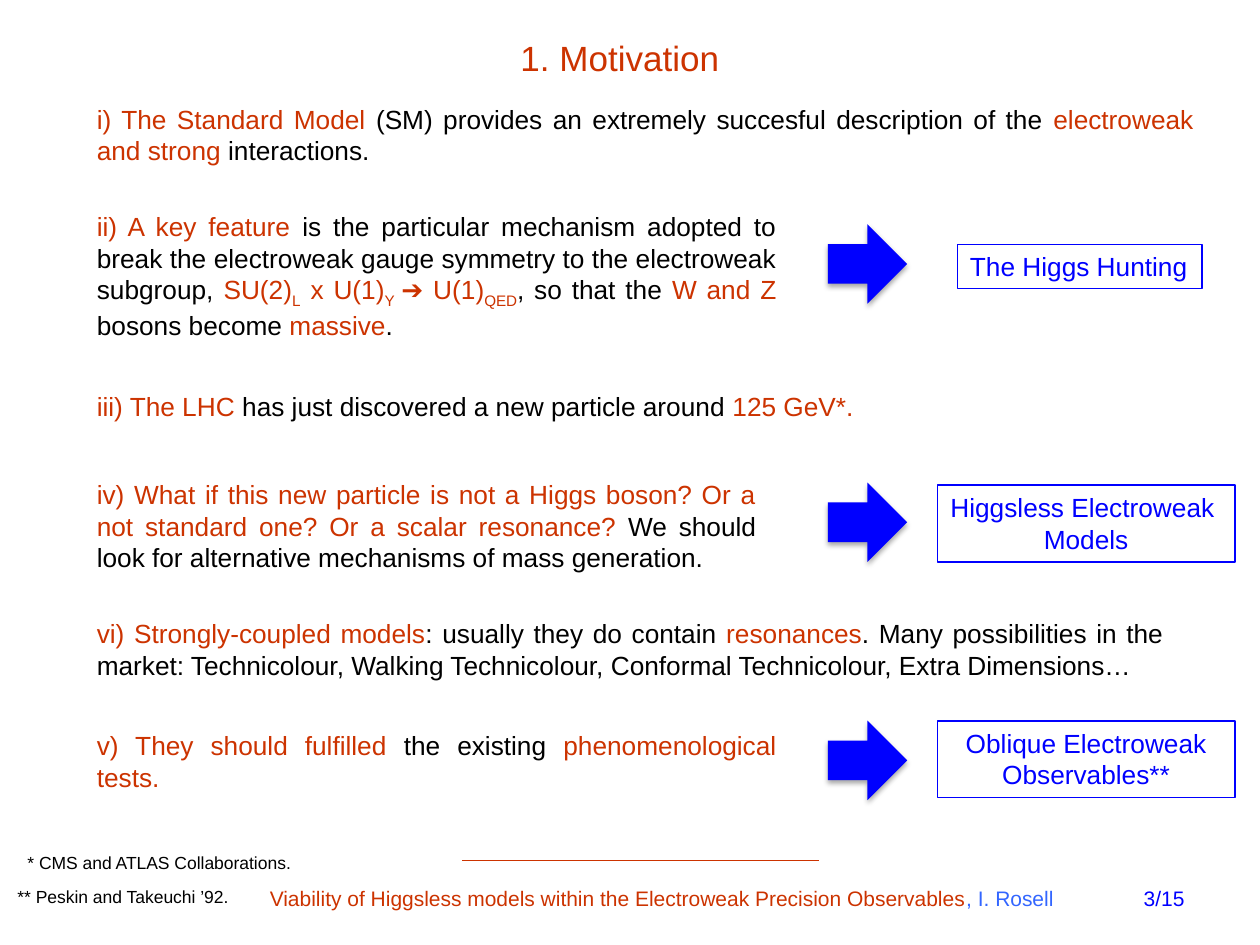
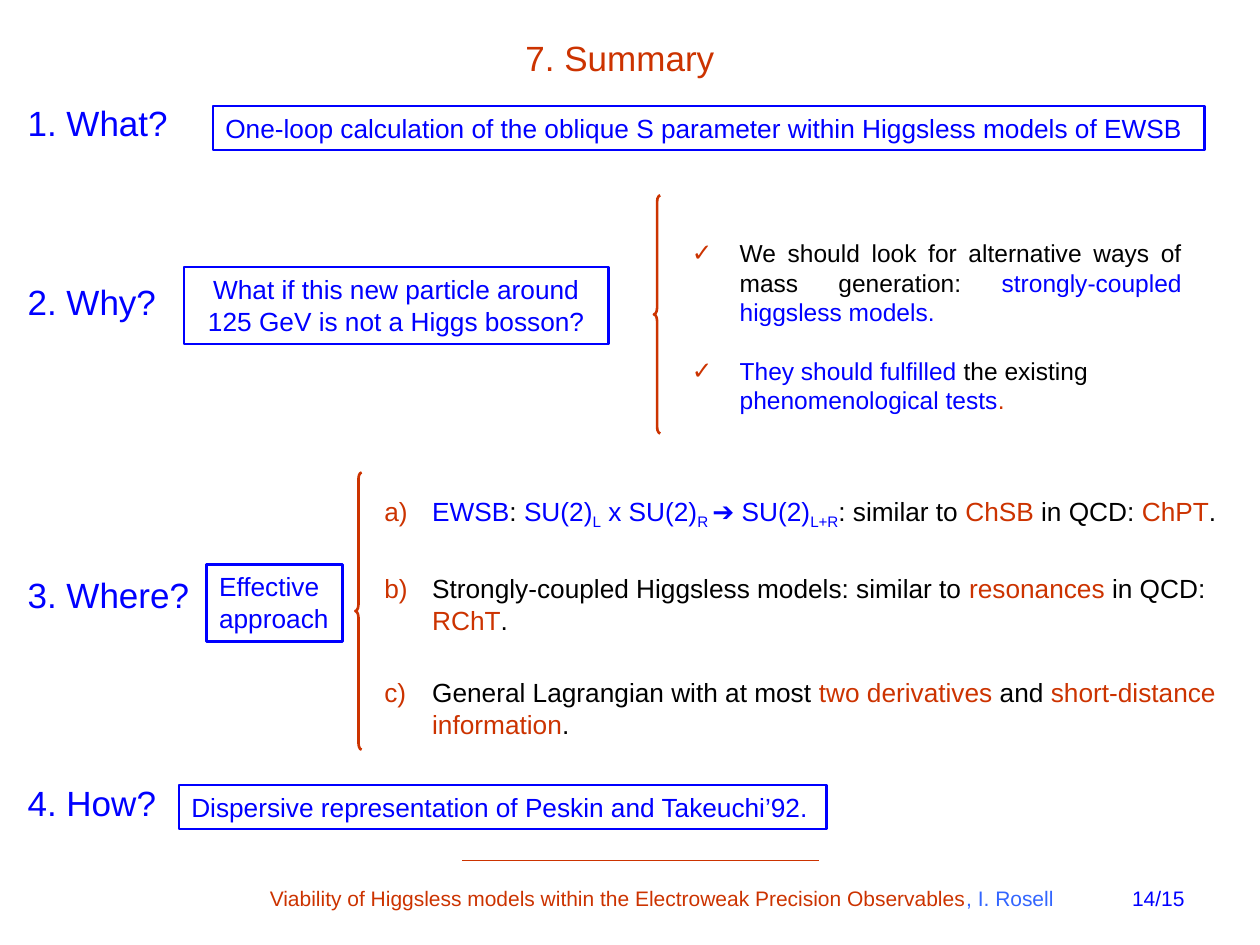
from lxml import etree
from pptx import Presentation
from pptx.dml.color import RGBColor
from pptx.enum.shapes import MSO_CONNECTOR, MSO_SHAPE
from pptx.enum.text import MSO_ANCHOR, MSO_AUTO_SIZE, PP_ALIGN
from pptx.oxml.ns import qn
from pptx.util import Inches, Pt

LEFT, CENTER, RIGHT, JUSTIFY = PP_ALIGN.LEFT, PP_ALIGN.CENTER, PP_ALIGN.RIGHT, PP_ALIGN.JUSTIFY
TOP, NO_FIT = MSO_ANCHOR.TOP, MSO_AUTO_SIZE.NONE
RECTANGLE, ARROW, BRACE = MSO_SHAPE.RECTANGLE, MSO_SHAPE.RIGHT_ARROW, MSO_SHAPE.LEFT_BRACE
STRAIGHT = MSO_CONNECTOR.STRAIGHT

COLORS = {"red": "CC3300", "blue": "0000FF", "sky": "3366FF", "black": "000000"}
FONT = "Arial"
TOTAL_PAGES = 15
TITLE_ONLY, TWO_CONTENT = 5, 3
INDENT = 0.38


def rgb(name):
    return RGBColor.from_string(COLORS[name])


def add_xml(parent, tag, **attributes):
    return etree.SubElement(parent, qn(tag), attributes)


def add_bullet(paragraph, bullet):
    properties = paragraph._p.get_or_add_pPr()
    properties.set("marL", str(Inches(INDENT)))
    properties.set("indent", str(-Inches(INDENT)))
    add_xml(add_xml(properties, "a:buClr"), "a:srgbClr", val=COLORS["red"])
    add_xml(properties, "a:buFont", typeface=FONT)
    if bullet == "a)":
        add_xml(properties, "a:buAutoNum", type="alphaLcParenR")
    else:
        add_xml(properties, "a:buChar", char=bullet)


def write_text(frame, paragraphs, size=15, align=LEFT, wrap=True, bullet=None, gap=0):
    """Each paragraph is a list of (color, text); text between tildes is subscript."""
    frame.word_wrap = wrap
    frame.auto_size = NO_FIT
    frame.vertical_anchor = TOP
    for number, pieces in enumerate(paragraphs):
        paragraph = frame.add_paragraph() if number else frame.paragraphs[0]
        paragraph.alignment = align
        paragraph.space_before = Pt(gap if number else 0)
        if bullet:
            add_bullet(paragraph, bullet)
        for color, text in pieces:
            for part, words in enumerate(text.split("~")):
                if not words:
                    continue
                run = paragraph.add_run()
                run.text = words
                run.font.name = FONT
                run.font.size = Pt(size)
                run.font.color.rgb = rgb(color)
                if part % 2:
                    run.font._element.set("baseline", "-25000")


class Deck:
    def __init__(self):
        self.presentation = Presentation()
        self.presentation.slide_width = Inches(10)
        self.presentation.slide_height = Inches(7.5)
        self.slide = None

    def start_slide(self, layout, title, page):
        self.slide = self.presentation.slides.add_slide(self.presentation.slide_layouts[layout])
        self.fill_placeholder(0, 0.51, 0.24, 8.82, 0.44, [[("red", title)]], size=20, align=CENTER)
        self.rule(3.67, 6.5, 6.83)
        self.text(7.17, 6.98, 2.33, 0.52, [[("blue", f"{page}/{TOTAL_PAGES}")]], size=12, align=RIGHT)
        self.text(1.93, 6.98, 6.69, 0.28, [[
            ("red", "Viability of Higgsless models within the Electroweak Precision Observables"),
            ("sky", ", I. Rosell ")]], size=12, align=CENTER)

    def fill_placeholder(self, index, left, top, width, height, paragraphs, **style):
        holder = next(p for p in self.slide.placeholders if p.placeholder_format.idx == index)
        holder.left, holder.top = Inches(left), Inches(top)
        holder.width, holder.height = Inches(width), Inches(height)
        write_text(holder.text_frame, paragraphs, **style)
        return holder

    def text(self, left, top, width, height, paragraphs, **style):
        box = self.slide.shapes.add_textbox(Inches(left), Inches(top), Inches(width), Inches(height))
        write_text(box.text_frame, paragraphs, **style)

    def shape(self, preset, left, top, width, height, fill=None, line=None, weight=1):
        shape = self.slide.shapes.add_shape(
            preset, Inches(left), Inches(top), Inches(width), Inches(height))
        shape.shadow.inherit = False
        if fill:
            shape.fill.solid()
            shape.fill.fore_color.rgb = rgb(fill)
        else:
            shape.fill.background()
        if line:
            shape.line.color.rgb = rgb(line)
            shape.line.width = Pt(weight)
        else:
            shape.line.fill.background()
        return shape

    def framed(self, left, top, width, height, lines, weight=1.0, **style):
        frame = self.shape(RECTANGLE, left, top, width, height, line="blue", weight=weight)
        write_text(frame.text_frame, [[("blue", line)] for line in lines], **style)

    def arrow(self, top):
        arrow = self.shape(ARROW, 6.57, top, 0.63, 0.63, fill="blue")
        effects = arrow._element.spPr.find(qn("a:effectLst"))
        shadow = add_xml(effects, "a:outerShdw", blurRad=str(Pt(3.1)), dist=str(Pt(1.8)),
                         dir="5400000", rotWithShape="0")
        add_xml(add_xml(shadow, "a:srgbClr", val=COLORS["black"]), "a:alpha", val="35000")

    def brace(self, left, top, height):
        brace = self.shape(BRACE, left, top, 0.05, height, line="red", weight=1.5)
        brace.adjustments[0] = 1.01
        brace.adjustments[1] = 0.5

    def rule(self, start, end, y):
        rule = self.slide.shapes.add_connector(
            STRAIGHT, Inches(start), Inches(y), Inches(end), Inches(y))
        rule.line.color.rgb = rgb("red")
        rule.line.width = Pt(0.75)
        add_xml(rule._element.spPr, "a:effectLst")


def build_motivation(deck):
    deck.start_slide(TITLE_ONLY, "1. Motivation", 3)
    arguments = [
        (0.77, 8.9, 0.86, [
            ("red", "i) The Standard Model "),
            ("black", "(SM) provides an extremely succesful description of the "),
            ("red", "electroweak and strong "), ("black", "interactions.")]),
        (1.62, 5.59, 1.11, [
            ("red", "ii) A key feature "),
            ("black", "is the particular mechanism adopted to break the electroweak gauge "
                      "symmetry to the electroweak subgroup, "),
            ("red", "SU(2)~L~ x U(1)~Y ~➔ U(1)~QED~"), ("black", ", so that the "),
            ("red", "W and Z "), ("black", "bosons become "), ("red", "massive"), ("black", ".")]),
        (3.05, 8.66, 0.61, [
            ("red", "iii) The LHC "), ("black", "has just discovered a new particle around "),
            ("red", "125 GeV*. ")]),
        (3.75, 5.43, 0.86, [
            ("red", "iv) What if this new particle is not a Higgs boson? Or a not standard one? "
                    "Or a scalar resonance? "),
            ("black", "We should look for alternative mechanisms of mass generation.")]),
        (4.85, 8.66, 0.61, [
            ("red", "vi) Strongly-coupled models"), ("black", ": usually they do contain "),
            ("red", "resonances"),
            ("black", ". Many possibilities in the market: Technicolour, Walking Technicolour, "
                      "Conformal Technicolour, Extra Dimensions…")]),
        (5.74, 5.59, 0.61, [
            ("red", "v) They should fulfilled "), ("black", "the existing "),
            ("red", "phenomenological tests.")]),
    ]
    for top, width, height, pieces in arguments:
        deck.text(0.67, top, width, height, [pieces], align=JUSTIFY)

    for top in (1.78, 3.83, 5.72):
        deck.arrow(top)
    deck.framed(7.6, 1.94, 1.94, 0.35, ["The Higgs Hunting"], wrap=False)
    deck.framed(7.44, 3.85, 2.36, 0.61, ["Higgsless Electroweak ", "Models"], align=CENTER)
    deck.framed(7.44, 5.72, 2.36, 0.61, ["Oblique Electroweak Observables**"], align=CENTER)

    deck.text(0.12, 6.71, 2.36, 0.27, [[("black", "* CMS and ATLAS Collaborations.")]], size=10)
    deck.text(0.04, 6.98, 1.97, 0.27, [[("black", "** Peskin and Takeuchi ’92.")]], size=10)


def build_summary(deck):
    deck.start_slide(TWO_CONTENT, "7. Summary", 14)
    questions = [(0.76, "1. What?"), (2.18, "2. Why?"), (4.5, "3. Where?"), (6.15, "4. How?")]
    for top, question in questions:
        deck.text(0.12, top, 1.65, 0.43, [[("blue", question)]], size=20)

    deck.framed(1.69, 0.84, 7.87, 0.35, [
        "One-loop calculation of the oblique S parameter within Higgsless models of EWSB"], weight=1.5)
    deck.framed(1.46, 2.12, 3.37, 0.61, [
        "What if this new particle around 125 GeV is not a Higgs bosson?"], weight=1.5, align=CENTER)
    deck.framed(1.64, 4.48, 1.08, 0.61, ["Effective", "approach"], weight=1.5, wrap=False)
    deck.framed(1.42, 6.23, 5.14, 0.35, [
        "Dispersive representation of Peskin and Takeuchi’92."], weight=1.5)

    deck.brace(5.19, 1.55, 1.89)
    reasons = deck.fill_placeholder(1, 5.39, 1.84, 4.09, 1.51, [
        [("black", "We should look for alternative ways of mass generation: "),
         ("blue", "strongly-coupled higgsless models.")],
        [("blue", "They should fulfilled "), ("black", "the existing "),
         ("blue", "phenomenological tests"), ("red", ".")],
    ], size=14, bullet="✓", gap=16.9)
    reasons.text_frame.paragraphs[0].alignment = JUSTIFY

    deck.brace(2.82, 3.75, 2.2)
    deck.fill_placeholder(2, 2.95, 3.88, 6.93, 2.07, [
        [("blue", "EWSB"), ("black", ": "), ("blue", "SU(2)~L~ x SU(2)~R ~➔ SU(2)~L+R~"),
         ("black", ": similar to "), ("red", "ChSB"), ("black", " in QCD: "),
         ("red", "ChPT"), ("black", ".")],
        [("black", "Strongly-coupled Higgsless models: similar to "), ("red", "resonances "),
         ("black", "in QCD: "), ("red", "RChT"), ("black", ".")],
        [("black", "General Lagrangian with at most "), ("red", "two derivatives"),
         ("black", " and "), ("red", "short-distance information"), ("black", ".")],
    ], bullet="a)", gap=23.6)


def main():
    deck = Deck()
    build_motivation(deck)
    build_summary(deck)
    deck.presentation.save("out.pptx")


if __name__ == "__main__":
    main()
